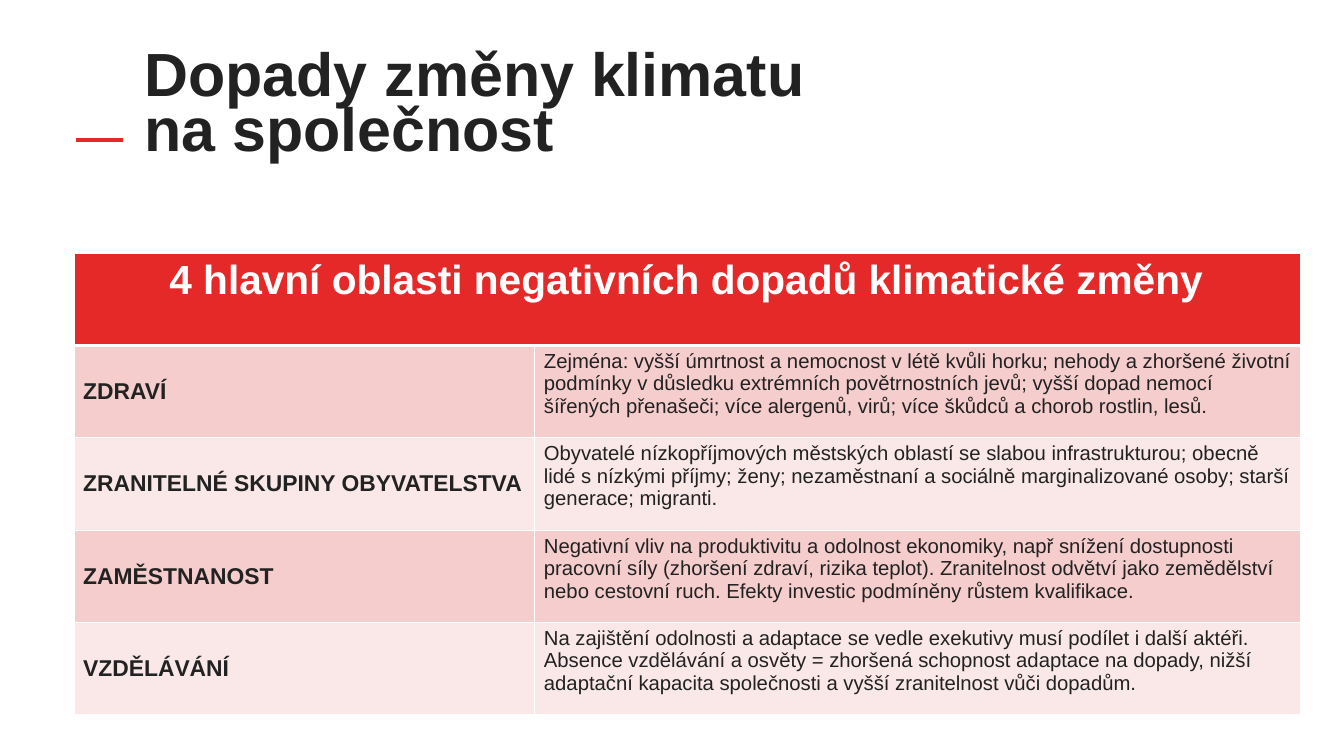
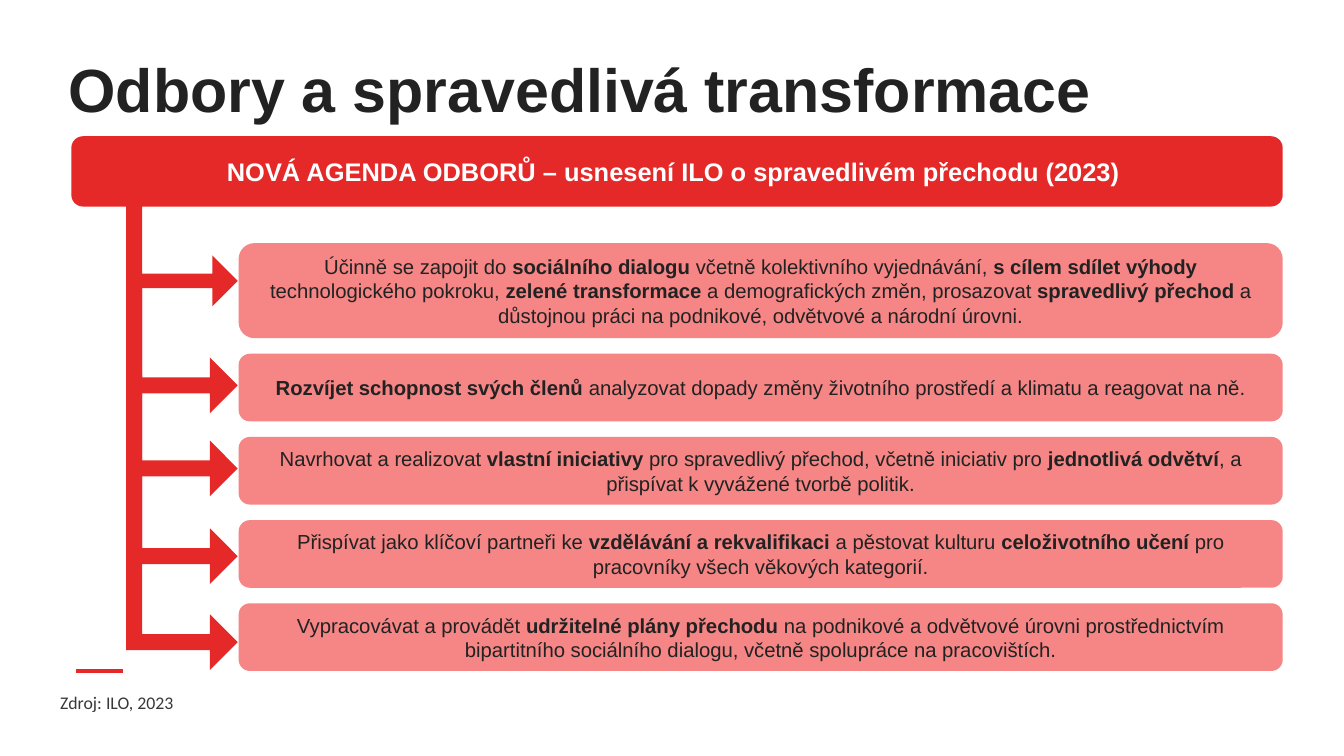
import pptx
import pptx.dml.color
import pptx.enum.shapes
import pptx.enum.text
import pptx.oxml
import pptx.oxml.ns
import pptx.util

PX = 9144  # 100 px to the inch
RED, PINK, ROSE, BLUSH = "E52828", "F68585", "F5CDCD", "FAE8E8"
DARK, GREY, WHITE = "222222", "383838", "FFFFFF"
SHAPE = pptx.enum.shapes.MSO_SHAPE
ANCHOR = pptx.enum.text.MSO_ANCHOR
CENTER = pptx.enum.text.PP_ALIGN.CENTER

TITLE = {"size": 48, "bold": True, "color": DARK}
TABLE_HEAD = {"size": 32, "bold": True, "color": WHITE}
AREA = {"size": 18, "bold": True, "color": DARK}
BODY = {"size": 16, "color": DARK}
BANNER = {"size": 20, "bold": True, "color": WHITE}
SOURCE = {"size": 14, "color": GREY, "name": "Calibri"}

IMPACTS = [
    ("ZDRAVÍ", "Zejména: vyšší úmrtnost a nemocnost v létě kvůli horku; nehody a zhoršené životní podmínky v důsledku extrémních povětrnostních jevů; vyšší dopad nemocí šířených přenašeči; více alergenů, virů; více škůdců a chorob rostlin, lesů."),
    ("ZRANITELNÉ SKUPINY OBYVATELSTVA", "Obyvatelé nízkopříjmových městských oblastí se slabou infrastrukturou; obecně lidé s nízkými příjmy; ženy; nezaměstnaní a sociálně marginalizované osoby; starší generace; migranti."),
    ("ZAMĚSTNANOST", "Negativní vliv na produktivitu a odolnost ekonomiky, např snížení dostupnosti pracovní síly (zhoršení zdraví, rizika teplot). Zranitelnost odvětví jako zemědělství nebo cestovní ruch. Efekty investic podmíněny růstem kvalifikace."),
    ("VZDĚLÁVÁNÍ", "Na zajištění odolnosti a adaptace se vedle exekutivy musí podílet i další aktéři. Absence vzdělávání a osvěty = zhoršená schopnost adaptace na dopady, nižší adaptační kapacita společnosti a vyšší zranitelnost vůči dopadům."),
]

# Top and bottom of the arrow that leads to each goal, then its text
GOALS = [
    (224, 335, "Účinně se zapojit do **sociálního dialogu **včetně kolektivního vyjednávání, **s cílem sdílet výhody **technologického pokroku, **zelené transformace **a demografických změn, prosazovat **spravedlivý přechod **a důstojnou práci na podnikové, odvětvové a národní úrovni."),
    (224, 452, "**Rozvíjet schopnost svých členů **analyzovat dopady změny životního prostředí a klimatu a reagovat na ně."),
    (315, 543, "Navrhovat a realizovat **vlastní iniciativy **pro spravedlivý přechod, včetně iniciativ pro **jednotlivá odvětví**, a přispívat k vyvážené tvorbě politik."),
    (411, 639, "Přispívat jako klíčoví partneři ke **vzdělávání a rekvalifikaci **a pěstovat kulturu **celoživotního učení **pro pracovníky všech věkových kategorií."),
    (505, 733, "Vypracovávat a provádět **udržitelné plány přechodu **na podnikové a odvětvové úrovni prostřednictvím bipartitního sociálního dialogu, včetně spolupráce na pracovištích."),
]


def emu(*lengths):
    return [pptx.util.Emu(round(n * PX)) for n in lengths]


def rgb(color):
    return pptx.dml.color.RGBColor.from_string(color)


def fill(target, color):
    target.fill.solid()
    target.fill.fore_color.rgb = rgb(color)


def write(tf, text, style, **paragraph):
    """Write one paragraph; ** switches bold on and off, a newline breaks the line."""
    p = tf.paragraphs[0]
    for key, value in paragraph.items():
        setattr(p, key, value)
    for i, part in enumerate(text.split("**")):
        for j, line in enumerate(part.split("\n")):
            if j:
                p.add_line_break()
            if not line:
                continue
            r = p.add_run()
            r.text = line
            font = {"name": "Arial", "bold": i % 2 == 1, **style}
            r.font.color.rgb = rgb(font.pop("color"))
            font["size"] = pptx.util.Pt(font["size"])
            for key, value in font.items():
                setattr(r.font, key, value)


def add_text(s, at, text, style, margins=None, **paragraph):
    tf = s.shapes.add_textbox(*emu(*at)).text_frame
    tf.word_wrap = True
    for side, px in (margins or {}).items():
        setattr(tf, "margin_" + side, emu(px)[0])
    write(tf, text, style, **paragraph)


def add_title(s, at, text):
    add_text(s, at, text, TITLE, {"left": 7, "top": 12}, line_spacing=0.75)


def add_dash(s, y):
    line = s.shapes.add_connector(
        pptx.enum.shapes.MSO_CONNECTOR.STRAIGHT, *emu(83, y, 135, y))
    line.line.color.rgb = rgb(RED)
    line.line.width = pptx.util.Pt(3)
    pptx.oxml.ns.qn("a:effectLst")
    line._element.spPr.append(pptx.oxml.parse_xml(
        f'<a:effectLst {pptx.oxml.ns.nsdecls("a")}/>'))


def add_shape(s, kind, at, color):
    sp = s.shapes.add_shape(kind, *emu(*at))
    sp.shadow.inherit = False
    fill(sp, color)
    sp.line.fill.background()
    return sp


def add_box(s, at, color, text, style):
    tf = add_shape(s, SHAPE.ROUNDED_RECTANGLE, at, color).text_frame
    tf.word_wrap = True
    tf.vertical_anchor = ANCHOR.MIDDLE
    write(tf, text, style, alignment=CENTER)


def add_branch(s, top, bottom):
    """Draw an arrow that goes down from top and turns right to its tip."""
    left, width, height = 138, 122, bottom - top
    shift = (width - height) / 2
    sp = add_shape(s, SHAPE.BENT_UP_ARROW,
                   (left + shift, top - shift, height, width), RED)
    sp.rotation = 90
    for i, value in enumerate((0.143, 0.25, 0.25)):
        sp.adjustments[i] = value


def set_borders(cell, bottom=1):
    tcPr = cell._tc.get_or_add_tcPr()
    for i, (side, pt) in enumerate({"L": 1, "R": 1, "T": 1, "B": bottom}.items()):
        tcPr.insert(i, pptx.oxml.parse_xml(
            f'<a:ln{side} {pptx.oxml.ns.nsdecls("a")} w="{pt * 12700}">'
            f'<a:solidFill><a:srgbClr val="{WHITE}"/></a:solidFill></a:ln{side}>'))


def add_impact_table(s):
    widths, row_height = (504, 837), 101
    rows = len(IMPACTS) + 1
    table = s.shapes.add_table(
        rows, 2, *emu(81, 277, sum(widths), rows * row_height)).table
    for column, width in zip(table.columns, emu(*widths)):
        column.width = width
    for i, row in enumerate(table.rows):
        row.height = emu(row_height)[0]
        for cell in row.cells:
            fill(cell, (BLUSH, ROSE)[i % 2] if i else RED)
            set_borders(cell, 1 if i else 3)
    head = table.cell(0, 0)
    head.merge(table.cell(0, 1))
    write(head.text_frame, "4 hlavní oblasti negativních dopadů klimatické změny",
          TABLE_HEAD, alignment=CENTER)
    for i, (area, impact) in enumerate(IMPACTS, 1):
        cell = table.cell(i, 0)
        cell.vertical_anchor = ANCHOR.MIDDLE
        write(cell.text_frame, area, AREA, space_after=pptx.util.Pt(6))
        write(table.cell(i, 1).text_frame, impact, BODY)


def build_impacts(s):
    add_dash(s, 153)
    add_title(s, (151, 46, 1181, 93), "Dopady změny klimatu\nna společnost")
    add_impact_table(s)


def build_agenda(s):
    add_dash(s, 734)
    add_title(s, (68, 63, 1335, 93), "Odbory a spravedlivá transformace")
    add_box(s, (78, 149, 1325, 77), RED,
            "NOVÁ AGENDA ODBORŮ – usnesení ILO o spravedlivém přechodu (2023) ", BANNER)
    add_text(s, (56, 752, 366, 34), "Zdroj: ILO, 2023", SOURCE)
    y = 266
    for i, (top, bottom, text) in enumerate(GOALS):
        height = 74 if i else 104
        add_box(s, (261, y, 1142, height), PINK, text, BODY)
        add_branch(s, top, bottom)
        y += height + 17


def main():
    prs = pptx.Presentation()
    prs.slide_width, prs.slide_height = emu(1470, 827)
    for build in (build_impacts, build_agenda):
        build(prs.slides.add_slide(prs.slide_layouts[6]))
    prs.save("out.pptx")


if __name__ == "__main__":
    main()
